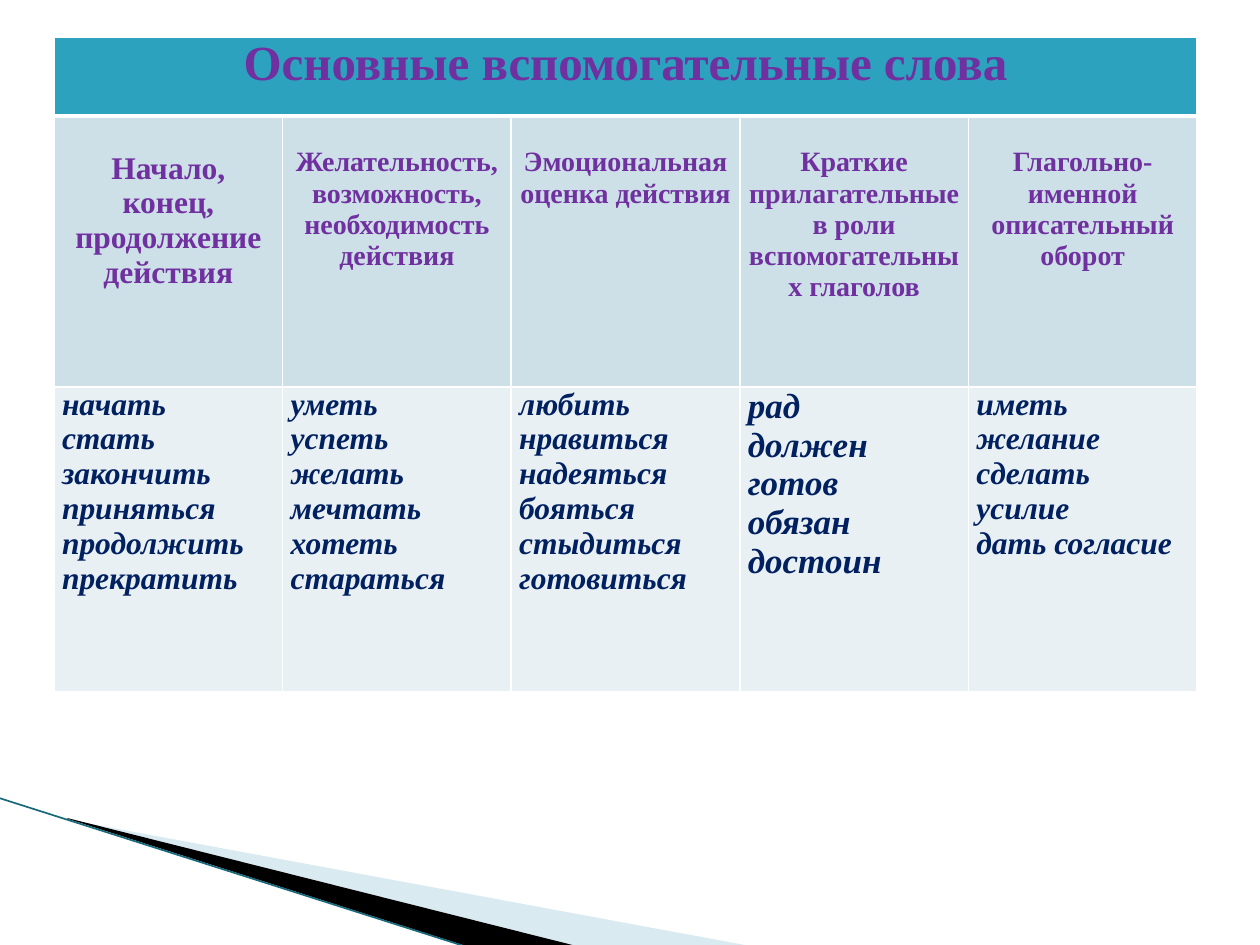
"""Builds a slide with a table of Russian auxiliary words."""
from lxml import etree
from pptx import Presentation, util as u
from pptx.dml.color import RGBColor
from pptx.enum import shapes, text
from pptx.oxml.ns import qn

SCALE = 914400 / 126
THEME = {
    "font": "Times New Roman", "title": 28, "large": 20, "body": 18, "small": 16,
    "violet": "7030A0", "navy": "002060", "edge": "FFFFFF",
    "fills": ["2DA2BF", "CDE0E8", "E8F0F4"],
    "pale": "A0CBDC", "black": "000000", "teal": "17697A",
}


def px(n):
    return u.Emu(round(n * SCALE))


def border(cell, side, width):
    line = etree.SubElement(cell._tc.get_or_add_tcPr(), qn(f"a:ln{side}"), w=str(u.Pt(width)))
    fill = etree.SubElement(line, qn("a:solidFill"))
    etree.SubElement(fill, qn("a:srgbClr"), val=THEME["edge"])


deck = Presentation()
deck.slide_width, deck.slide_height = px(1260), px(945)
slide = deck.slides.add_slide(deck.slide_layouts[6])

wedges = [
    ([(69, 820), (750, 946), (575, 946), (69, 819)], "pale", 40),
    ([(67, 818), (576, 946), (469, 947), (68, 819)], "black", 100),
]
for points, color, alpha in wedges:
    pen = slide.shapes.build_freeform(*points[0], scale=SCALE)
    pen.add_line_segments(points[1:], close=True)
    wedge = pen.convert_to_shape()
    wedge.shadow.inherit = False
    wedge.line.fill.background()
    wedge.fill.solid()
    wedge.fill.fore_color.rgb = RGBColor.from_string(THEME[color])
    if alpha < 100:
        tint = wedge._element.spPr.find(".//" + qn("a:srgbClr"))
        etree.SubElement(tint, qn("a:alpha"), val=str(alpha * 1000))

rule = slide.shapes.add_connector(shapes.MSO_CONNECTOR.STRAIGHT, px(-1), px(798), px(467), px(947))
rule.line.color.rgb = RGBColor.from_string(THEME["teal"])
rule.line.width = u.Pt(0.95)
etree.SubElement(rule._element.spPr, qn("a:effectLst"))

heads = [
    ("body", ["Начало, конец, продолжение действия"]),
    ("small", ["Желательность, возможность, необходимость действия"]),
    ("small", ["Эмоциональная оценка действия"]),
    ("small", ["Краткие прилагательные в роли вспомогательных глаголов"]),
    ("small", ["Глагольно-именной", "описательный", "оборот"]),
]
words = [
    ("body", ["начать", "стать", "закончить", "приняться", "продолжить", "прекратить"]),
    ("body", ["уметь", "успеть", "желать", "мечтать", "хотеть", "стараться"]),
    ("body", ["любить", "нравиться", "надеяться", "бояться стыдиться", "готовиться"]),
    ("large", ["рад", "должен", "готов", "обязан", "достоин"]),
    ("body", ["иметь желание", "сделать усилие", "дать согласие"]),
]
rows = [[("title", ["Основные вспомогательные слова"])] + [("title", [])] * 4, heads, words]
tops = {"body": 35, "small": 31}

table = slide.shapes.add_table(3, 5, px(54), px(37), px(1143), px(655)).table
table.first_row = table.horz_banding = False
for col in table.columns:
    col.width = px(1143) // 5
for row, high in zip(table.rows, (79, 271, 305)):
    row.height = px(high)
table.cell(0, 0).merge(table.cell(0, 4))

for r, row in enumerate(rows):
    for c, (size, lines) in enumerate(row):
        cell = table.cell(r, c)
        cell.margin_left = cell.margin_right = px(8)
        cell.margin_top = px(tops[size] if r == 1 else 0)
        cell.margin_bottom = 0
        for side in "LRTB":
            border(cell, side, 3 if (r, side) in ((0, "B"), (1, "T")) else 1)
        cell.fill.solid()
        cell.fill.fore_color.rgb = RGBColor.from_string(THEME["fills"][r])
        frame = cell.text_frame
        for n, line in enumerate(lines):
            para = frame.add_paragraph() if n else frame.paragraphs[0]
            para.alignment = text.PP_ALIGN.LEFT if r == 2 else text.PP_ALIGN.CENTER
            run = para.add_run()
            run.text = line
            run.font.name = THEME["font"]
            run.font.size = u.Pt(THEME[size])
            run.font.bold = True
            run.font.italic = r == 2
            run.font.color.rgb = RGBColor.from_string(THEME["navy" if r == 2 else "violet"])

deck.save("out.pptx")
